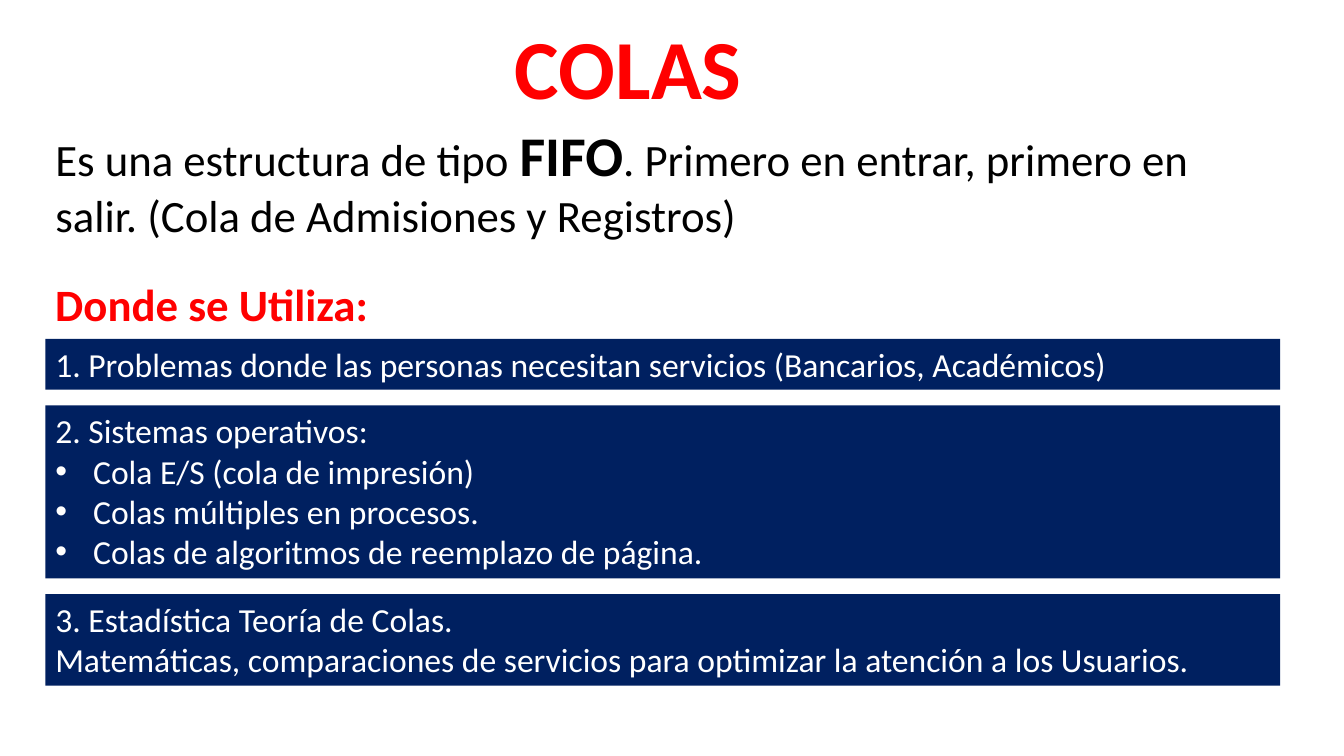
from dataclasses import dataclass

from lxml.etree import SubElement
from pptx import Presentation
from pptx.dml.color import RGBColor
from pptx.enum.shapes import MSO_SHAPE
from pptx.enum.text import MSO_ANCHOR, MSO_AUTO_SIZE, PP_ALIGN
from pptx.oxml.ns import qn
from pptx.shapes.autoshape import Shape
from pptx.slide import Slide
from pptx.util import Pt

COLORS = {"red": "FF0000", "black": "000000", "white": "FFFFFF", "navy": "002060"}
FONT = "Calibri"
LEFT, WIDTH = 32.4, 882
PANEL_TOP, PANEL_GAP = 242, 11.2
PANEL_LINE, PANEL_MARGINS = 29.1, 7.2
BULLET_INDENT = 27


@dataclass(frozen=True)
class Span:
    text: str
    size: float
    color: str
    bold: bool = False


@dataclass(frozen=True)
class Line:
    spans: tuple[Span, ...]
    bullet: bool = False


@dataclass(frozen=True)
class Label:
    left: float
    top: float
    width: float
    height: float
    line: Line


LABELS = (
    Label(360.7, 7.2, 209.5, 79.9, Line((Span("COLAS", 60, "red", True),))),
    Label(LEFT, 82.8, WIDTH, 94.3, Line((
        Span("Es una estructura de tipo ", 32, "black"),
        Span("FIFO", 40, "black", True),
        Span(". Primero en entrar, primero en salir. "
             "(Cola de Admisiones y Registros)", 32, "black"),
    ))),
    Label(LEFT, 194.4, 450.7, 46.1, Line((Span("Donde se Utiliza:", 32, "red", True),))),
)


def panel_line(text: str, bullet: bool = False) -> Line:
    return Line((Span(text, 24, "white"),), bullet)


PANELS = (
    (panel_line("1. Problemas donde las personas necesitan servicios (Bancarios, Académicos)"),),
    (
        panel_line("2. Sistemas operativos:"),
        panel_line("Cola E/S (cola de impresión)", True),
        panel_line("Colas múltiples en procesos.", True),
        panel_line("Colas de algoritmos de reemplazo de página.", True),
    ),
    (
        panel_line("3. Estadística Teoría de Colas."),
        panel_line("Matemáticas, comparaciones de servicios para optimizar "
                   "la atención a los Usuarios."),
    ),
)


def write_lines(box: Shape, lines: tuple[Line, ...]) -> None:
    frame = box.text_frame
    frame.word_wrap = True
    frame.auto_size = MSO_AUTO_SIZE.SHAPE_TO_FIT_TEXT
    frame.vertical_anchor = MSO_ANCHOR.TOP
    for index, line in enumerate(lines):
        para = frame.add_paragraph() if index else frame.paragraphs[0]
        para.alignment = PP_ALIGN.LEFT
        if line.bullet:
            properties = para._p.get_or_add_pPr()
            properties.set("marL", str(Pt(BULLET_INDENT)))
            properties.set("indent", str(-Pt(BULLET_INDENT)))
            SubElement(properties, qn("a:buFont"), typeface="Arial")
            SubElement(properties, qn("a:buChar"), char="•")
        for span in line.spans:
            run = para.add_run()
            run.text = span.text
            run.font.name = FONT
            run.font.size = Pt(span.size)
            run.font.bold = span.bold
            run.font.color.rgb = RGBColor.from_string(COLORS[span.color])


def add_label(page: Slide, label: Label) -> None:
    box = page.shapes.add_textbox(
        Pt(label.left), Pt(label.top), Pt(label.width), Pt(label.height))
    write_lines(box, (label.line,))


def add_panel(page: Slide, top: float, height: float, lines: tuple[Line, ...]) -> None:
    box = page.shapes.add_shape(
        MSO_SHAPE.RECTANGLE, Pt(LEFT), Pt(top), Pt(WIDTH), Pt(height))
    box.shadow.inherit = False
    box.fill.solid()
    box.fill.fore_color.rgb = RGBColor.from_string(COLORS["navy"])
    box.line.fill.background()
    write_lines(box, lines)


def main() -> None:
    deck = Presentation()
    deck.slide_width, deck.slide_height = Pt(960), Pt(540)
    page = deck.slides.add_slide(deck.slide_layouts[6])

    # Title, definition and heading
    for label in LABELS:
        add_label(page, label)

    # Uses, stacked with equal gaps and as tall as their lines
    top = PANEL_TOP
    for lines in PANELS:
        height = PANEL_MARGINS + PANEL_LINE * len(lines)
        add_panel(page, top, height, lines)
        top += height + PANEL_GAP

    deck.save("out.pptx")


if __name__ == "__main__":
    main()
